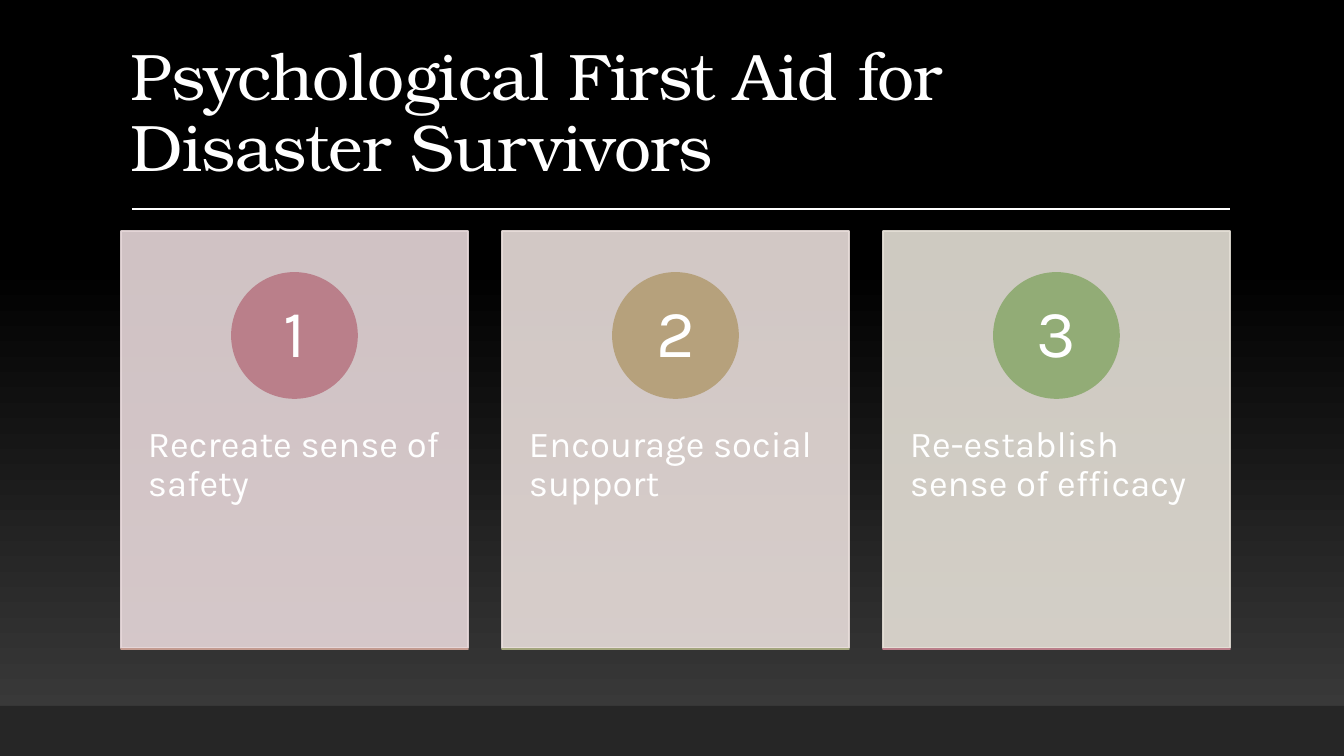
"""Build the slide on psychological first aid: a title and three numbered cards."""
import pptx
import pptx.dml.color
import pptx.enum.shapes
import pptx.enum.text
import pptx.oxml
import pptx.oxml.ns
import pptx.util

TITLE = "Psychological First Aid for Disaster Survivors"
CARDS = [
    {"text": "Recreate sense of safety", "panel": "E7D8DA", "disc": "BA7F8A", "base": "C39B90"},
    {"text": "Encourage social support", "panel": "E9DEDB", "disc": "B6A17C", "base": "A4A67E"},
    {"text": "Re-establish sense of efficacy", "panel": "E5E0D7", "disc": "92AC76", "base": "BA7F8A"},
]
HEADING_FONT, BODY_FONT = "TeX Gyre Bonum", "Karla"
WHITE = "FFFFFF"
PAGE_WIDTH, PAGE_HEIGHT = 1344, 756
FOOTER_HEIGHT = 50
CARD_LEFT, CARD_TOP, CARD_WIDTH, CARD_HEIGHT = 121, 231, 347, 417
CARD_STEP = 381
DISC_TOP, DISC_SIZE, NUMBER_SIZE = 273, 125, 89
TEXT_TOP, TEXT_HEIGHT = 390, 250
BASE_TOP = 649
RECTANGLE = pptx.enum.shapes.MSO_SHAPE.RECTANGLE
OVAL = pptx.enum.shapes.MSO_SHAPE.OVAL
ANCHOR = pptx.enum.text.MSO_ANCHOR
ALIGN = pptx.enum.text.PP_ALIGN


def px(*lengths):
    return [pptx.util.Emu(round(length * 914400 / 100.8)) for length in lengths]


def color(value):
    return pptx.dml.color.RGBColor.from_string(value)


def add_block(page, kind, place, fill, outlined=True, opacity=100):
    shape = page.shapes.add_shape(kind, *px(*place))
    shape.shadow.inherit = False
    shape.fill.solid()
    shape.fill.fore_color.rgb = color(fill)
    if outlined:
        shape.line.color.rgb = color(fill)
        shape.line.width = pptx.util.Pt(1.25)
    else:
        shape.line.fill.background()
    if opacity < 100:
        for tint in shape._element.iter(pptx.oxml.ns.qn("a:srgbClr")):
            alpha = pptx.oxml.parse_xml(
                f'<a:alpha {pptx.oxml.ns.nsdecls("a")} val="{opacity * 1000}"/>')
            tint.append(alpha)


def write(box, text, font, size, align, anchor, insets):
    frame = box.text_frame
    frame.text = text
    frame.word_wrap = True
    frame.auto_size = pptx.enum.text.MSO_AUTO_SIZE.NONE
    frame.vertical_anchor = anchor
    side, edge = px(*insets)
    frame.margin_left = frame.margin_right = side
    frame.margin_top = frame.margin_bottom = edge
    para = frame.paragraphs[0]
    para.alignment = align
    para.line_spacing = 0.9
    span = para.runs[0]
    span.font.name = font
    span.font.size = pptx.util.Pt(size)
    span.font.color.rgb = color(WHITE)
    return span


def add_background(page):
    fill = page.background.fill
    fill.gradient()
    fill.gradient_angle = 90
    for stop, (position, shade) in zip(fill.gradient_stops, [(0, "3F3F3F"), (0.65, "000000")]):
        stop.position = position
        stop.color.rgb = color(shade)


def add_heading(page):
    title = page.shapes.title
    title.left, title.top, title.width, title.height = px(121, 31, 1109, 160)
    span = write(title, TITLE, HEADING_FONT, 47, ALIGN.LEFT, ANCHOR.BOTTOM, (10, 5))
    span.font._element.set("spc", "-50")
    rule = page.shapes.add_connector(
        pptx.enum.shapes.MSO_CONNECTOR.STRAIGHT, *px(132, 209, 1230, 209))
    rule.line.color.rgb = color(WHITE)
    rule.line.width = pptx.util.Pt(1)
    rule._element.spPr.append(
        pptx.oxml.parse_xml(f'<a:effectLst {pptx.oxml.ns.nsdecls("a")}/>'))


def add_card(page, index, card):
    left = CARD_LEFT + index * CARD_STEP
    disc_left = left + (CARD_WIDTH - DISC_SIZE) // 2
    inset = (DISC_SIZE - NUMBER_SIZE) // 2
    add_block(page, RECTANGLE, (left, CARD_TOP, CARD_WIDTH, CARD_HEIGHT), card["panel"], opacity=90)
    label = page.shapes.add_textbox(*px(left, TEXT_TOP, CARD_WIDTH, TEXT_HEIGHT))
    write(label, card["text"], BODY_FONT, 26, ALIGN.LEFT, ANCHOR.TOP, (27, 36))
    add_block(page, OVAL, (disc_left, DISC_TOP, DISC_SIZE, DISC_SIZE), card["disc"])
    number = page.shapes.add_textbox(
        *px(disc_left + inset, DISC_TOP + inset, NUMBER_SIZE, NUMBER_SIZE))
    write(number, str(index + 1), BODY_FONT, 48, ALIGN.CENTER, ANCHOR.MIDDLE, (10, 1))
    add_block(page, RECTANGLE, (left, BASE_TOP, CARD_WIDTH, 0), card["base"])


def main():
    deck = pptx.Presentation()
    deck.slide_width, deck.slide_height = px(PAGE_WIDTH, PAGE_HEIGHT)
    page = deck.slides.add_slide(deck.slide_layouts.get_by_name("Title Only"))
    add_background(page)
    add_heading(page)
    footer = (0, PAGE_HEIGHT - FOOTER_HEIGHT, PAGE_WIDTH, FOOTER_HEIGHT)
    add_block(page, RECTANGLE, footer, "262626", outlined=False)
    for index, card in enumerate(CARDS):
        add_card(page, index, card)
    deck.save("out.pptx")


if __name__ == "__main__":
    main()
